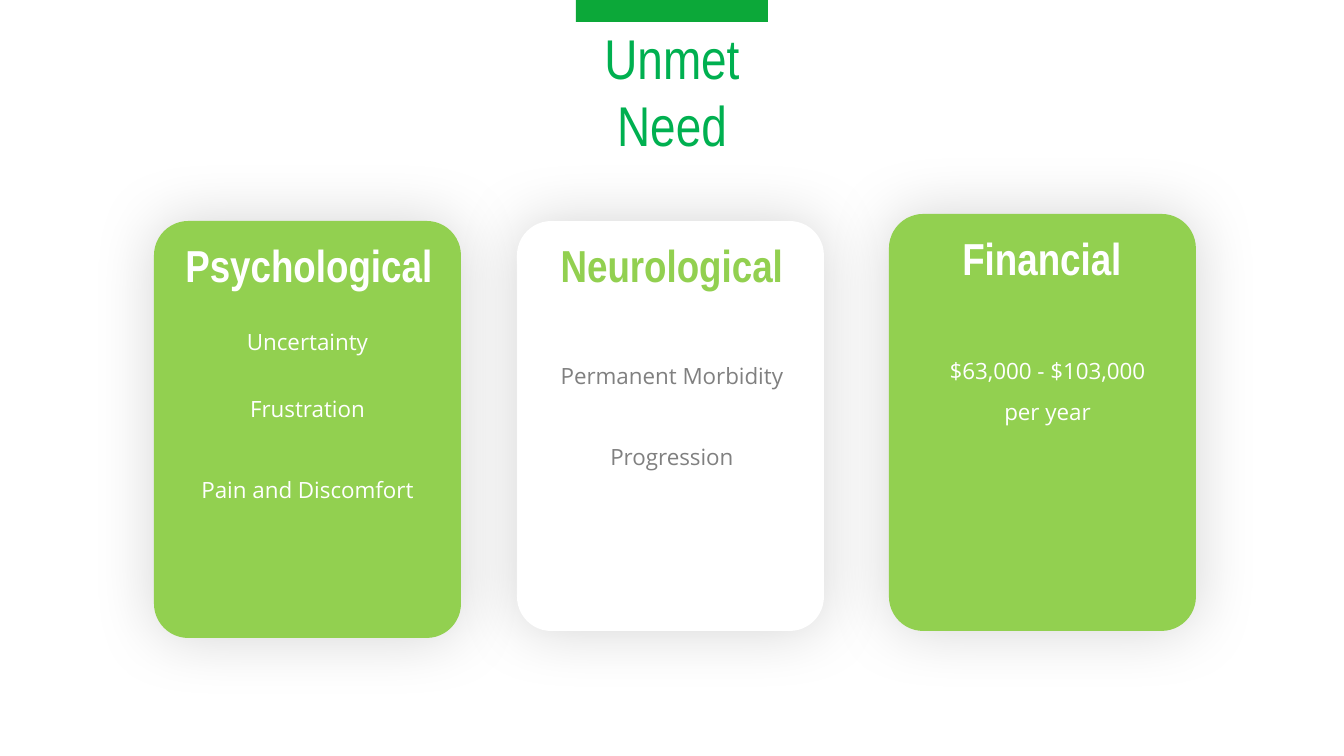
from pptx import Presentation
from pptx import util as u
from pptx.dml.color import RGBColor
from pptx.enum import shapes, text
from pptx.oxml import parse_xml
from pptx.oxml.ns import nsdecls

WHITE = RGBColor(0xFF, 0xFF, 0xFF)
LIME = RGBColor(0x92, 0xD0, 0x50)
GREEN = RGBColor(0x00, 0xB0, 0x50)
BAR_GREEN = RGBColor(0x0C, 0xA8, 0x39)
GREY = RGBColor(0x80, 0x80, 0x80)

# Content: lengths in px; each body line carries the space before it in points
TITLE = "Unmet Need"
BAR = (576, 0, 192, 22)
TITLE_BOX = (576, 25, 192, 138)
CARDS = [
    dict(box=(517, 221, 307, 410), fill=WHITE,
         heading="Neurological", heading_color=LIME, heading_center=672,
         body=[("Permanent Morbidity", 0), ("Progression", 29)],
         body_color=GREY, body_box=(516, 344, 312, 128)),
    dict(box=(154, 221, 307, 417), fill=LIME,
         heading="Psychological", heading_color=WHITE, heading_center=309,
         body=[("Uncertainty", 0), ("Frustration", 19), ("Pain and Discomfort", 29)],
         body_color=WHITE, body_box=(164, 310, 287, 210)),
    dict(box=(889, 214, 307, 417), fill=LIME,
         heading="Financial", heading_color=WHITE, heading_center=1042,
         body=[("$63,000 - $103,000 per year", 0)],
         body_color=WHITE, body_box=(926, 339, 243, 88)),
]
HEADING_WIDTH, HEADING_HEIGHT, HEADING_DROP = 303, 64, 12
CORNER = 0.112
HEADING_FONT = dict(name="Arial Narrow", size=u.Pt(32), bold=True)
TITLE_FONT = dict(name="Arial Narrow", size=u.Pt(40))
BODY_FONT = dict(name="Open Sans", size=u.Pt(16))
SHADOW = (
    f'<a:effectLst {nsdecls("a")}><a:outerShdw blurRad="{u.Pt(45)}" dist="0" '
    'algn="ctr" rotWithShape="0"><a:srgbClr val="000000"><a:alpha val="17000"/>'
    '</a:srgbClr></a:outerShdw></a:effectLst>')


def px(*lengths):
    return [round(length * 914400 / 100.8) for length in lengths]


def add_block(slide, kind, box, color):
    shape = slide.shapes.add_shape(kind, *px(*box))
    shape.shadow.inherit = False
    shape.fill.solid()
    shape.fill.fore_color.rgb = color
    shape.line.fill.background()
    return shape


def add_text(slide, box, lines, font, color, spacing=None, anchor=text.MSO_ANCHOR.TOP):
    frame = slide.shapes.add_textbox(*px(*box)).text_frame
    frame.word_wrap = True
    frame.vertical_anchor = anchor
    for index, (line, gap) in enumerate(lines):
        paragraph = frame.paragraphs[0] if index == 0 else frame.add_paragraph()
        paragraph.alignment = text.PP_ALIGN.CENTER
        if spacing:
            paragraph.line_spacing = spacing
        if gap:
            paragraph.space_before = u.Pt(gap)
        run = paragraph.add_run()
        run.text = line
        for name, value in font.items():
            setattr(run.font, name, value)
        run.font.color.rgb = color


def add_card(slide, card):
    shape = add_block(slide, shapes.MSO_SHAPE.ROUNDED_RECTANGLE, card["box"], card["fill"])
    shape.adjustments[0] = CORNER
    properties = shape.element.spPr
    properties.remove(properties.find("{*}effectLst"))
    properties.append(parse_xml(SHADOW))

    heading_box = (card["heading_center"] - HEADING_WIDTH / 2,
                   card["box"][1] + HEADING_DROP, HEADING_WIDTH, HEADING_HEIGHT)
    add_text(slide, heading_box, [(card["heading"], 0)], HEADING_FONT, card["heading_color"])
    add_text(slide, card["body_box"], card["body"], BODY_FONT, card["body_color"], spacing=1.5)


def main():
    presentation = Presentation()
    presentation.slide_width, presentation.slide_height = px(1344, 756)
    slide = presentation.slides.add_slide(presentation.slide_layouts[6])

    # Cards
    for card in CARDS:
        add_card(slide, card)

    # Title under its bar
    add_block(slide, shapes.MSO_SHAPE.RECTANGLE, BAR, BAR_GREEN)
    add_text(slide, TITLE_BOX, [(TITLE, 0)], TITLE_FONT, GREEN,
             anchor=text.MSO_ANCHOR.BOTTOM)

    presentation.save("out.pptx")


if __name__ == "__main__":
    main()
